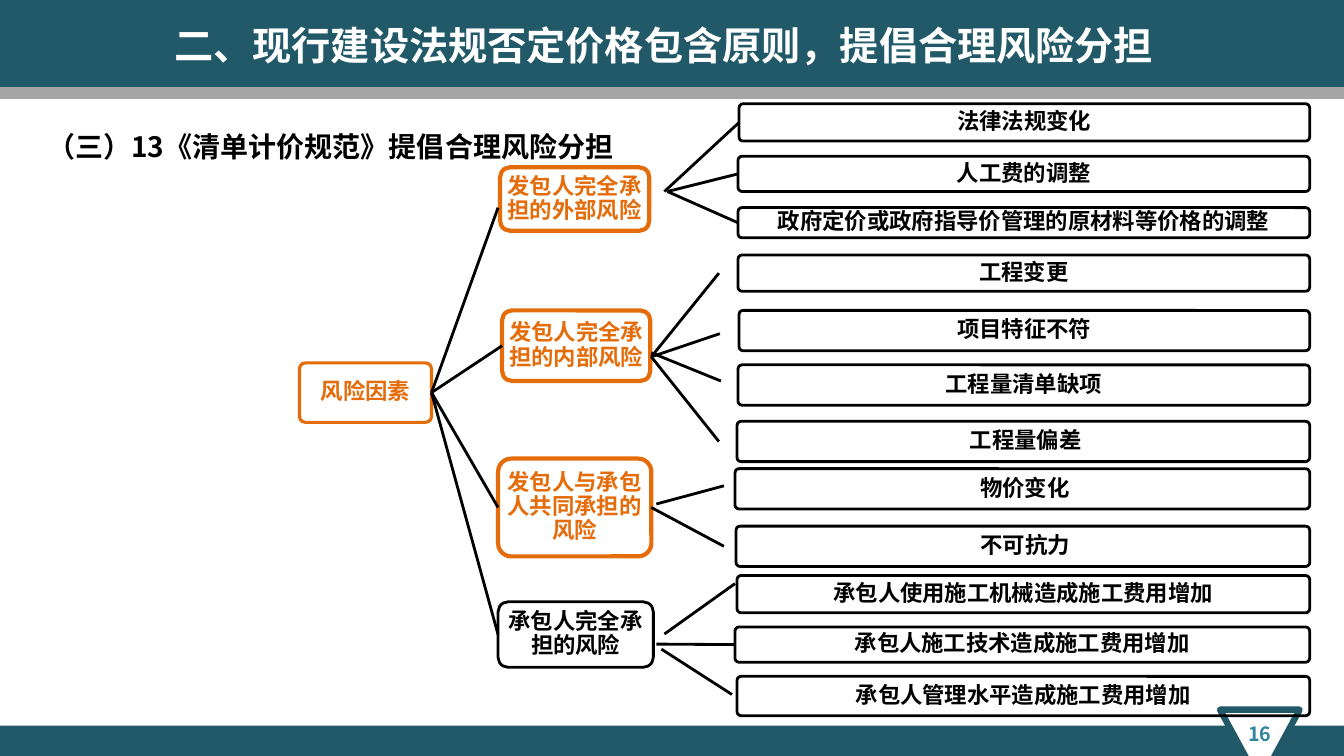
from typing import NamedTuple

from lxml import etree
from pptx import Presentation
from pptx import util as u
from pptx.dml.color import RGBColor
from pptx.enum import shapes, text
from pptx.oxml.ns import qn

FONT = "Noto Sans CJK SC"
COLORS = {"teal": "215968", "aqua": "31859C", "gray": "A6A6A6",
          "orange": "E46C0A", "black": "000000", "white": "FFFFFF"}
LEAF_RIGHT = 12.99
JOIN_DISTANCE = 0.05
RIGHT_SIDE, LEFT_SIDE = 3, 1


class Node(NamedTuple):
    words: str
    left: float
    top: float
    width: float
    height: float
    color: str = "orange"
    line: float = 3
    corner: float = 0.1
    inset: float = 0.01


class Leaf(NamedTuple):
    words: str
    left: float
    top: float
    height: float


class Link(NamedTuple):
    x1: float
    y1: float
    x2: float
    y2: float


NODES = [
    Node("风险因素", 2.97, 3.6, 1.31, 0.59, line=2.25, corner=0.06),
    Node("发包人完全承担的外部风险", 4.96, 1.66, 1.48, 0.63),
    Node("发包人完全承担的内部风险", 4.98, 3.08, 1.47, 0.7),
    Node("发包人与承包人共同承担的风险", 4.94, 4.55, 1.52, 0.97, corner=0.13),
    Node("承包人完全承担的风险", 4.94, 5.97, 1.54, 0.65, color="black", line=2),
]
LEAVES = [
    Leaf("法律法规变化", 7.33, 1.03, 0.37),
    Leaf("人工费的调整", 7.32, 1.55, 0.35),
    Leaf("政府定价或政府指导价管理的原材料等价格的调整", 7.32, 2.06, 0.3),
    Leaf("工程变更", 7.32, 2.53, 0.36),
    Leaf("项目特征不符", 7.33, 3.08, 0.4),
    Leaf("工程量清单缺项", 7.32, 3.62, 0.4),
    Leaf(" 工程量偏差", 7.31, 4.18, 0.4),
    Leaf(" 物价变化", 7.29, 4.65, 0.4),
    Leaf(" 不可抗力", 7.3, 5.22, 0.4),
    Leaf("承包人使用施工机械造成施工费用增加", 7.31, 5.71, 0.37),
    Leaf("承包人施工技术造成施工费用增加", 7.29, 6.22, 0.35),
    Leaf("承包人管理水平造成施工费用增加", 7.31, 6.71, 0.39),
]
LINKS = [
    # Root to branches
    Link(4.29, 3.85, 4.94, 2.06), Link(4.29, 3.9, 4.94, 3.41),
    Link(4.29, 3.9, 4.92, 5.03), Link(4.29, 3.9, 4.92, 6.29),
    # Branches to leaves
    Link(6.59, 1.9, 7.31, 1.22), Link(6.62, 1.9, 7.31, 1.73),
    Link(6.62, 1.9, 7.31, 2.2),
    Link(6.46, 3.54, 7.13, 2.71), Link(6.46, 3.54, 7.14, 3.31),
    Link(6.46, 3.5, 7.15, 3.78), Link(6.46, 3.54, 7.13, 4.38),
    Link(6.51, 5, 7.18, 4.82), Link(6.5, 5.04, 7.18, 5.42),
    Link(6.59, 6.29, 7.29, 5.79), Link(6.51, 6.39, 7.26, 6.39),
    Link(6.56, 6.44, 7.26, 6.89),
]


def rgb(name: str) -> RGBColor:
    return RGBColor.from_string(COLORS[name])


def write(box, words: str, *, size: float, color: str, center: bool = False,
          middle: bool = False, spacing: float = 1, inset: float | None = None,
          wrap: bool = True) -> None:
    frame = box.text_frame
    frame.word_wrap = wrap
    frame.vertical_anchor = text.MSO_ANCHOR.MIDDLE if middle else text.MSO_ANCHOR.TOP
    if inset is not None:
        frame.margin_left = frame.margin_right = u.Inches(inset)
        frame.margin_top = frame.margin_bottom = u.Inches(inset)
    para = frame.paragraphs[0]
    para.alignment = text.PP_ALIGN.CENTER if center else text.PP_ALIGN.LEFT
    para.line_spacing = spacing
    span = para.add_run()
    span.text = words
    span.font.name, span.font.size, span.font.bold = FONT, u.Pt(size), True
    span.font.color.rgb = rgb(color)
    east_asian = etree.SubElement(span.font._element, qn("a:ea"))
    east_asian.set("typeface", FONT)


def add_label(page, words: str, left: float, top: float, width: float,
              height: float, **style) -> None:
    box = page.shapes.add_textbox(*map(u.Inches, (left, top, width, height)))
    write(box, words, **style)
    box.text_frame.auto_size = text.MSO_AUTO_SIZE.SHAPE_TO_FIT_TEXT


def add_block(page, kind, left: float, top: float, width: float, height: float, *,
              fill: str | None = None, line: str | None = None, weight: float = 1):
    box = page.shapes.add_shape(kind, *map(u.Inches, (left, top, width, height)))
    box.shadow.inherit = False
    if fill:
        box.fill.solid()
        box.fill.fore_color.rgb = rgb(fill)
    else:
        box.fill.background()
    if line:
        box.line.color.rgb = rgb(line)
        box.line.width = u.Pt(weight)
    else:
        box.line.fill.background()
    return box


def add_node(page, node: Node):
    box = add_block(page, shapes.MSO_SHAPE.ROUNDED_RECTANGLE, node.left, node.top,
                    node.width, node.height, line=node.color, weight=node.line)
    box.adjustments[0] = node.corner / min(node.width, node.height)
    write(box, node.words, size=16, color=node.color, center=True, middle=True,
          spacing=0.9, inset=node.inset)
    return box


def add_line(page, link: Link, color: str, weight: float):
    line = page.shapes.add_connector(shapes.MSO_CONNECTOR.STRAIGHT, *map(u.Inches, link))
    line.line.color.rgb = rgb(color)
    line.line.width = u.Pt(weight)
    etree.SubElement(line._element.spPr, qn("a:effectLst"))
    return line


def near_box(boxes: list, x: float, y: float, side: int):
    """Return the box whose side has its middle close to the point."""
    for box in boxes:
        edge = box.left + (box.width if side == RIGHT_SIDE else 0)
        offsets = (edge - u.Inches(x), box.top + box.height / 2 - u.Inches(y))
        if max(map(abs, offsets)) < u.Inches(JOIN_DISTANCE):
            return box
    return None


def add_link(page, link: Link, boxes: list) -> None:
    line = add_line(page, link, "black", 2)
    if start := near_box(boxes, link.x1, link.y1, RIGHT_SIDE):
        line.begin_connect(start, RIGHT_SIDE)
    if end := near_box(boxes, link.x2, link.y2, LEFT_SIDE):
        line.end_connect(end, LEFT_SIDE)


def main() -> None:
    deck = Presentation()
    deck.slide_width, deck.slide_height = u.Inches(13.33), u.Inches(7.5)
    page = deck.slides.add_slide(deck.slide_layouts[6])

    # Header, footer and page number
    for top, height in ((0, 0.89), (7.2, 0.3)):
        add_block(page, shapes.MSO_SHAPE.RECTANGLE, 0, top, 13.33, height, fill="teal")
    add_line(page, Link(0, 0.92, 13.33, 0.92), "gray", 8.75)
    marker = add_block(page, shapes.MSO_SHAPE.ISOSCELES_TRIANGLE, 12.1, 7.04, 0.79, 0.73,
                       fill="white", line="teal", weight=4.5)
    marker.rotation = 180
    add_label(page, "16", 12.26, 7.11, 0.47, 0.34, size=14, color="aqua",
              center=True, wrap=False)

    # Headings
    add_label(page, "（三）13《清单计价规范》提倡合理风险分担",
              0.37, 1.24, 6.13, 0.44, size=20, color="black")
    add_label(page, "二、现行建设法规否定价格包含原则，提倡合理风险分担",
              1.63, 0.16, 10.08, 0.57, size=28, color="white")

    # Risk tree
    leaf_nodes = [Node(leaf.words, leaf.left, leaf.top, LEAF_RIGHT - leaf.left,
                       leaf.height, color="black", line=2, corner=0.04)
                  for leaf in LEAVES]
    boxes = [add_node(page, node) for node in NODES + leaf_nodes]
    for link in LINKS:
        add_link(page, link, boxes)

    deck.save("out.pptx")


if __name__ == "__main__":
    main()
